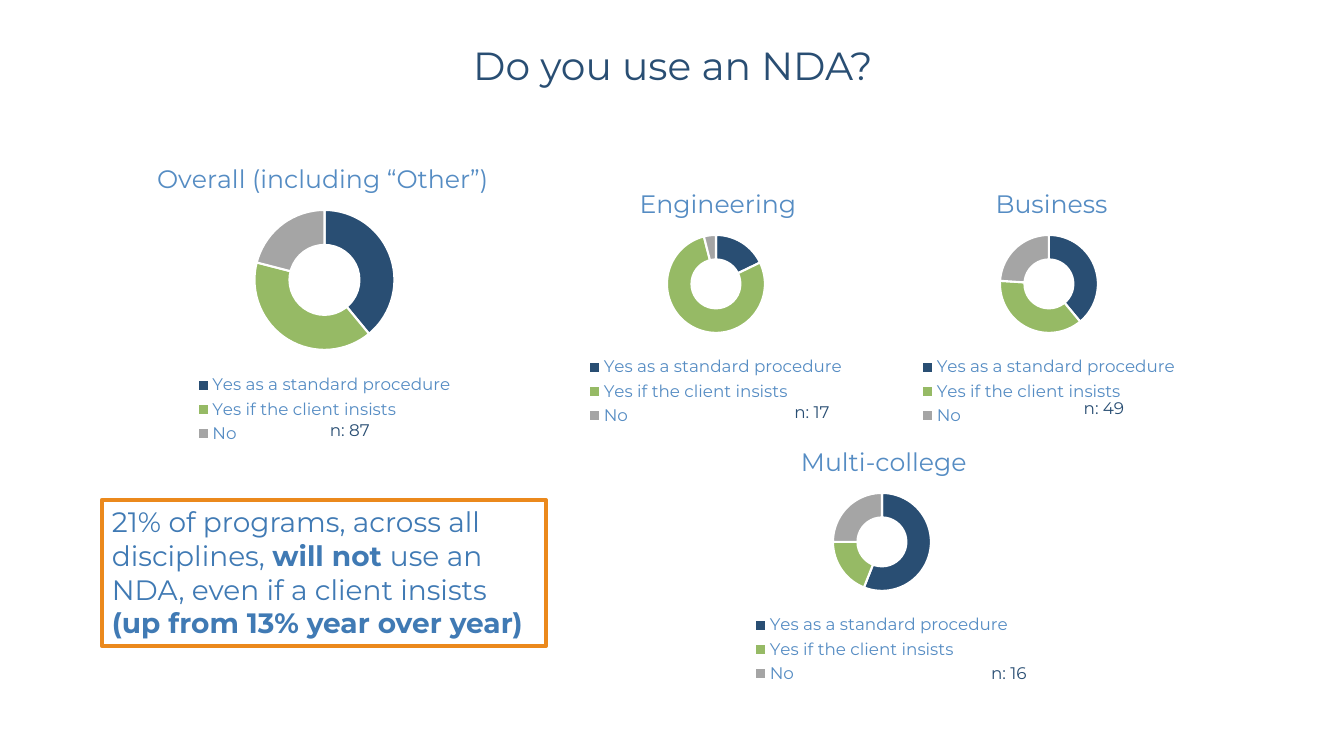
"""Builds a slide of four doughnut charts on how programs use NDAs."""
import lxml.etree
import pptx
import pptx.chart.data
import pptx.dml.color
import pptx.enum.chart
import pptx.enum.shapes
import pptx.enum.text
import pptx.oxml.ns
import pptx.util

PX = 9144000 / 1008
THEME = {
    "font": "Montserrat",
    "navy": "294E73", "green": "96BA65", "gray": "A5A5A5", "white": "FFFFFF",
    "label": "558CC3", "message": "407AB4", "frame": "EB891C",
    "heading": 28, "takeaway": 20, "chart_title": 18, "small": 12,
}
ANSWERS = {
    "Yes as a standard procedure": "navy",
    "Yes if the client insists": "green",
    "No": "gray",
}
LARGE = {"size": (467, 311), "title_top": 20, "ring": 140, "ring_top": 73, "legend_top": 234}
SMALL = {"size": (402, 268), "title_top": 20, "ring": 98, "ring_top": 73, "legend_top": 191}
LEGEND_SIZE = (260, 78)
CENTER = pptx.enum.text.PP_ALIGN.CENTER
LEFT = pptx.enum.text.PP_ALIGN.LEFT
GROUPS = [
    ("Overall (including “Other”)", 344, (39, 40, 21), (91, 137), LARGE, "n: 87", (320, 415, 97), LEFT),
    ("Engineering", 162, (18, 79, 4), (515, 162), SMALL, "n: 17", (757, 397, 110), CENTER),
    ("Business", 116, (39, 37, 24), (848, 162), SMALL, "n: 49", (1049, 393, 110), CENTER),
    ("Multi-college", 171, (56, 19, 25), (681, 420), SMALL, "n: 16", (954, 658, 110), CENTER),
]
TAKEAWAY = [
    ("21% of programs, across all disciplines, ", False),
    ("will not ", True),
    ("use an NDA, even if a client insists ", False),
    ("(up from 13% year over year)", True),
]


def style_font(font, size, color, bold=False):
    font.name = THEME["font"]
    font.size = pptx.util.Pt(THEME[size])
    font.bold = bold
    font.color.rgb = pptx.dml.color.RGBColor.from_string(THEME[color])


def set_layout(part, index, chart_size, left, top, size=None):
    for old in part.xpath("c:layout"):
        part.remove(old)
    layout = lxml.etree.Element(pptx.oxml.ns.qn("c:layout"))
    manual = lxml.etree.SubElement(layout, pptx.oxml.ns.qn("c:manualLayout"))
    values = {"xMode": "edge", "yMode": "edge",
              "x": left / chart_size[0], "y": top / chart_size[1]}
    if size:
        values["w"] = size[0] / chart_size[0]
        values["h"] = size[1] / chart_size[1]
    if part.tag == pptx.oxml.ns.qn("c:plotArea"):
        values = {"layoutTarget": "inner", **values}
    for name, value in values.items():
        lxml.etree.SubElement(manual, pptx.oxml.ns.qn("c:" + name)).set("val", str(value))
    part.insert(index, layout)


deck = pptx.Presentation()
deck.slide_width, deck.slide_height = round(1344 * PX), round(756 * PX)
slide = deck.slides.add_slide(deck.slide_layouts[5])

heading = slide.shapes.title
heading.left, heading.top, heading.width, heading.height = [
    round(v * PX) for v in (193, 36, 960, 58)]
heading.text_frame.vertical_anchor = pptx.enum.text.MSO_ANCHOR.MIDDLE
heading_line = heading.text_frame.paragraphs[0]
heading_line.alignment = CENTER
heading_run = heading_line.add_run()
heading_run.text = "Do you use an NDA?"
style_font(heading_run.font, "heading", "navy")

for name, name_width, shares, corner, form, count, count_box, count_align in GROUPS:
    size = form["size"]
    answers = pptx.chart.data.CategoryChartData()
    answers.categories = list(ANSWERS)
    answers.add_series("Series 1", shares)
    chart = slide.shapes.add_chart(
        pptx.enum.chart.XL_CHART_TYPE.DOUGHNUT,
        *[round(v * PX) for v in corner + size], answers).chart
    style_font(chart.font, "small", "navy")

    chart.has_title = True
    name_run = chart.chart_title.text_frame.paragraphs[0].add_run()
    name_run.text = name
    style_font(name_run.font, "chart_title", "label")
    set_layout(chart.chart_title._element, 1, size,
               (size[0] - name_width) / 2, form["title_top"])

    chart.has_legend = True
    chart.legend.position = pptx.enum.chart.XL_LEGEND_POSITION.BOTTOM
    chart.legend.include_in_layout = False
    style_font(chart.legend.font, "small", "label")
    set_layout(chart.legend._element, 1, size,
               (size[0] - LEGEND_SIZE[0]) / 2, form["legend_top"], LEGEND_SIZE)

    ring = form["ring"]
    plot_area = chart._chartSpace.xpath("c:chart/c:plotArea")[0]
    set_layout(plot_area, 0, size, (size[0] - ring) / 2, form["ring_top"], (ring, ring))
    plot_area.xpath(".//c:holeSize")[0].set("val", "75")
    plot = chart.plots[0]
    plot.vary_by_categories = True
    for i, color in enumerate(ANSWERS.values()):
        slice_format = plot.series[0].points[i].format
        slice_format.fill.solid()
        slice_format.fill.fore_color.rgb = pptx.dml.color.RGBColor.from_string(THEME[color])
        slice_format.line.color.rgb = pptx.dml.color.RGBColor.from_string(THEME["white"])
        slice_format.line.width = pptx.util.Pt(1.5)

    sample = slide.shapes.add_textbox(*[round(v * PX) for v in count_box + (30,)])
    sample.text_frame.word_wrap = True
    sample_line = sample.text_frame.paragraphs[0]
    sample_line.alignment = count_align
    sample_run = sample_line.add_run()
    sample_run.text = count
    style_font(sample_run.font, "small", "navy")

takeaway = slide.shapes.add_shape(
    pptx.enum.shapes.MSO_SHAPE.RECTANGLE, *[round(v * PX) for v in (102, 500, 444, 146)])
takeaway.shadow.inherit = False
takeaway.fill.background()
takeaway.line.color.rgb = pptx.dml.color.RGBColor.from_string(THEME["frame"])
takeaway.line.width = pptx.util.Pt(3)
takeaway.text_frame.word_wrap = True
takeaway.text_frame.vertical_anchor = pptx.enum.text.MSO_ANCHOR.TOP
takeaway_line = takeaway.text_frame.paragraphs[0]
takeaway_line.alignment = LEFT
for words, bold in TAKEAWAY:
    takeaway_run = takeaway_line.add_run()
    takeaway_run.text = words
    style_font(takeaway_run.font, "takeaway", "message", bold)

deck.save("out.pptx")
